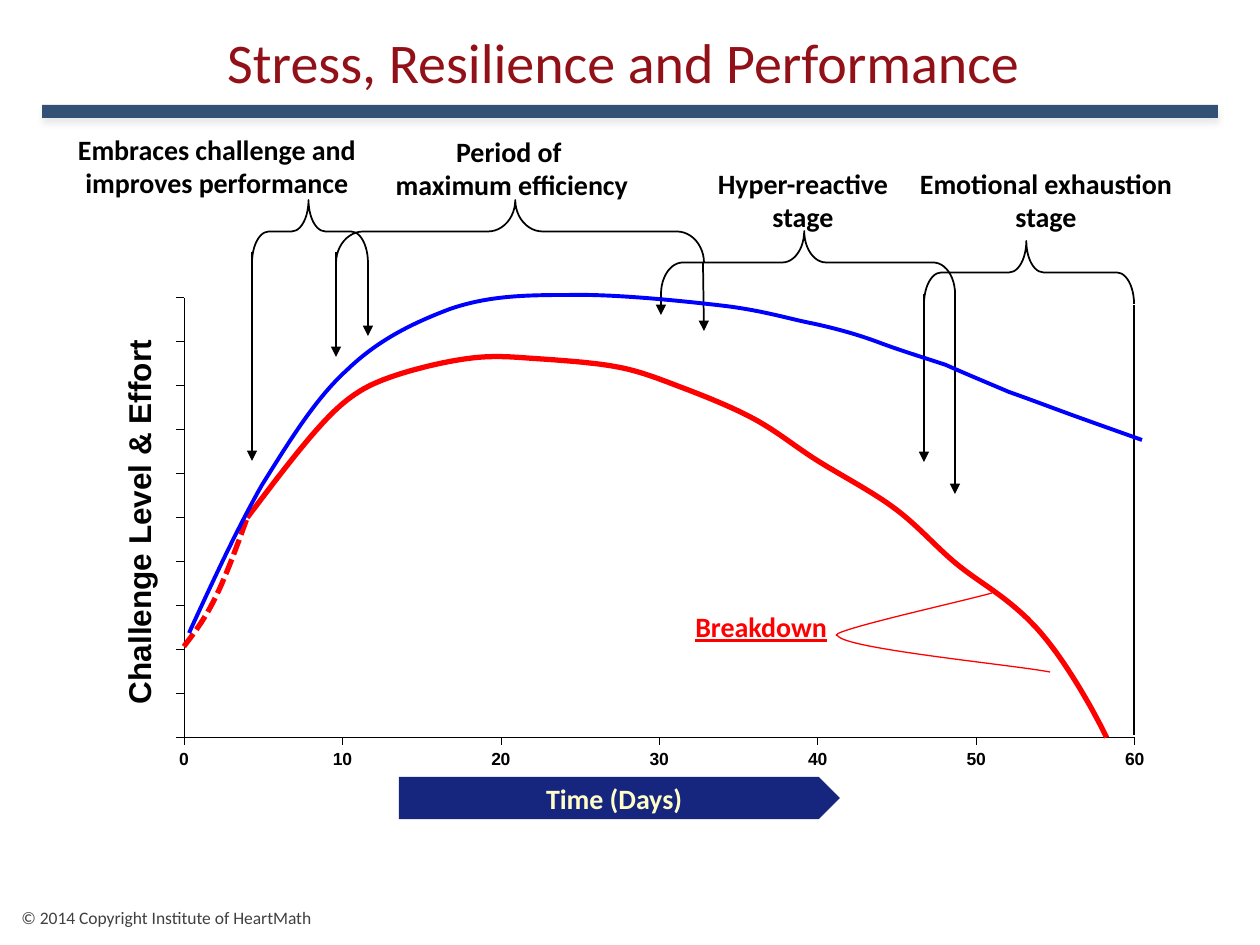
from lxml.etree import SubElement
from pptx import Presentation
from pptx.chart.data import XyChartData
from pptx.dml.color import RGBColor
from pptx.enum.chart import XL_CHART_TYPE as ChartType, XL_TICK_LABEL_POSITION as LabelPlace, XL_TICK_MARK as Tick
from pptx.enum.dml import MSO_LINE as Dash
from pptx.enum.shapes import MSO_CONNECTOR as Connector, MSO_SHAPE as Shape
from pptx.enum.text import MSO_ANCHOR as Anchor, PP_ALIGN as Align
from pptx.oxml import parse_xml
from pptx.oxml.ns import nsdecls, qn
from pptx.util import Emu, Pt

SCALE = 914400 / 126
COLORS = {"title": "921118", "bar": "335075", "black": "000000", "red": "FF0000", "blue": "0000FF",
          "arrow": "16267E", "cream": "FFFEC9", "footer": "404040"}

TITLE = "Stress, Resilience and Performance "
STAGES = [
    (["Embraces challenge and improves performance"], (53, 126, 328, 81)),
    (["Period of ", "maximum efficiency"], (381, 128, 262, 81)),
    (["Hyper-reactive", "stage"], (672, 160, 262, 81)),
    (["Emotional exhaustion", "stage"], (884, 160, 324, 81)),
]
BRACES = [(252, 368, 200, 0.267), (336, 704, 200, 0.434), (661, 955, 231, 0.347), (924, 1134, 241, 0.273)]
BRACE_DEPTH = 63
BRACE_POINT = 0.513
ARROWS = [(368, 262, 368, 336), (336, 252, 336, 357), (703, 262, 704, 331), (924, 294, 924, 462),
          (252, 252, 252, 461), (661, 294, 661, 315), (955, 294, 955, 494)]
END_LINE = (1134, 305, 1134, 735)

DAYS = [0, 2, 4, 4, 9, 13, 18, 22, 27, 31, 36, 40, 45, 49, 54, 58, 58]
SERIES = [
    ("Series 1", None, [None] * 3 + [58, 84, 95, 100, 100, 98, 93, 84, 73, 60, 45, 28, 2, 0]),
    ("Series 2", Dash.SQUARE_DOT, [24, 37, 58] + [None] * 14),
]
CHALLENGE_CURVE = [
    (189, 633), (213, 581), (237, 529), (262, 485), (289, 442), (315, 399), (347, 370),
    (378, 340), (413, 323), (450, 309), (488, 296), (523, 295), (570, 295),
    (615, 294), (683, 301), (725, 306), (765, 311), (789, 319), (815, 324),
    (842, 330), (862, 336), (883, 344), (905, 352), (925, 358), (946, 365),
    (966, 374), (988, 383), (1009, 392), (1029, 399), (1050, 407), (1072, 415),
    (1094, 423), (1128, 435), (1142, 440),
]
BREAKDOWN_CURVE = [(1050, 672), (1014, 665), (847, 649), (838, 636), (819, 633), (960, 602), (992, 593)]


def px(value):
    return Emu(round(value * SCALE))


def rgb(name):
    return RGBColor.from_string(COLORS[name])


def set_line(line, color, width):
    line.color.rgb = rgb(color)
    line.width = Pt(width)


def write(frame, lines, size, color, align=Align.LEFT, bold=False, underline=False):
    frame.word_wrap = True
    for index, text in enumerate(lines):
        para = frame.paragraphs[0] if index == 0 else frame.add_paragraph()
        para.alignment = align
        span = para.add_run()
        span.text = text
        span.font.name = "Calibri"
        span.font.size = Pt(size)
        span.font.bold = bold
        span.font.underline = underline
        span.font.color.rgb = rgb(color)


def add_text(page, rect, lines, size, color, **style):
    box = page.shapes.add_textbox(*map(px, rect))
    write(box.text_frame, lines, size, color, **style)


def add_filled(page, kind, rect, color):
    shape = page.shapes.add_shape(kind, *map(px, rect))
    shape.shadow.inherit = False
    shape.fill.solid()
    shape.fill.fore_color.rgb = rgb(color)
    shape.line.fill.background()
    return shape


def add_brace(page, left, right, top, bend):
    length = right - left
    center_x, center_y = (left + right) / 2, top + BRACE_DEPTH / 2
    rect = (center_x - BRACE_DEPTH / 2, center_y - length / 2, BRACE_DEPTH, length)
    brace = page.shapes.add_shape(Shape.LEFT_BRACE, *map(px, rect))
    brace.rotation = 90
    brace.adjustments[0] = bend
    brace.adjustments[1] = BRACE_POINT
    brace.shadow.inherit = False
    brace.fill.background()
    set_line(brace.line, "black", 1)


def add_line(page, ends, arrow=True):
    line = page.shapes.add_connector(Connector.STRAIGHT, *map(px, ends))
    set_line(line.line, "black", 1)
    if arrow:
        SubElement(line.line._get_or_add_ln(), qn("a:tailEnd"), type="triangle")
    SubElement(line._element.spPr, qn("a:effectLst"))


def add_curve(page, knots, color, width):
    points = [(px(x), px(y)) for x, y in knots]
    builder = page.shapes.build_freeform(*points[0])
    builder.add_line_segments(points[1:], close=False)
    curve = builder.convert_to_shape()
    outline = next(curve._element.iter(qn("a:path")))
    segments = outline.findall(qn("a:lnTo"))
    for start in range(0, len(segments), 3):
        bezier = SubElement(outline, qn("a:cubicBezTo"))
        for segment in segments[start:start + 3]:
            bezier.append(segment[0])
            outline.remove(segment)
    curve.shadow.inherit = False
    curve.fill.background()
    set_line(curve.line, color, width)


def manual_layout(parts):
    body = "".join(f'<c:{tag} val="{value}"/>' for tag, value in parts)
    return parse_xml(f'<c:layout {nsdecls("c")}><c:manualLayout>{body}</c:manualLayout></c:layout>')


def drop_layout(element):
    for old in element.findall(qn("c:layout")):
        element.remove(old)


def add_stress_chart(page):
    data = XyChartData()
    for name, _, values in SERIES:
        series = data.add_series(name)
        for day, value in zip(DAYS, values):
            series.add_data_point(day, value)
    frame = page.shapes.add_chart(ChartType.XY_SCATTER_SMOOTH_NO_MARKERS, *map(px, (98, 283, 1060, 508)), data)
    chart = frame.chart
    chart.has_legend = False
    chart.has_title = False
    chart.font.name = "Arial"
    chart.font.size = Pt(18)
    chart.font.bold = True
    chart.font.color.rgb = rgb("black")
    chart.plots[0].vary_by_categories = False
    for series, (_, dash, _) in zip(chart.plots[0].series, SERIES):
        series._element.get_or_add_smooth().val = True
        for point in list(series._element.iter(qn("c:pt"))):
            if point.findtext(qn("c:v")) in ("None", "", None):
                point.getparent().remove(point)
        set_line(series.format.line, "red", 3)
        if dash:
            series.format.line.dash_style = dash
    days, effort = chart.category_axis, chart.value_axis
    for axis, top, unit in ((days, 60, 10), (effort, 116, 11.6)):
        axis.minimum_scale, axis.maximum_scale, axis.major_unit = 0, top, unit
        axis.has_major_gridlines = False
        axis.major_tick_mark, axis.minor_tick_mark = Tick.OUTSIDE, Tick.NONE
        set_line(axis.format.line, "black", 0.25)
    days.tick_label_position = LabelPlace.LOW
    days.tick_labels.font.size = Pt(10)
    days.tick_labels.font.bold = True
    effort.tick_label_position = LabelPlace.NONE
    span = effort.axis_title.text_frame.paragraphs[0].add_run()
    span.text = "Challenge Level & Effort "
    span.font.name = "Arial"
    span.font.size = Pt(18)
    span.font.bold = True
    span.font.color.rgb = rgb("black")
    effort.axis_title.text_frame._txBody.bodyPr.set("rot", "-5400000")
    title = effort.axis_title._element
    drop_layout(title)
    title.find(qn("c:tx")).addnext(manual_layout(
        [("xMode", "edge"), ("yMode", "edge"), ("x", 0.014), ("y", 0.084)]))
    area = chart._chartSpace.chart.plotArea
    drop_layout(area)
    area.insert(0, manual_layout([("layoutTarget", "inner"), ("xMode", "edge"), ("yMode", "edge"),
                                  ("x", 0.081), ("y", 0.029), ("w", 0.897), ("h", 0.866)]))


def main():
    deck = Presentation()
    deck.slide_width, deck.slide_height = px(1260), px(945)
    page = deck.slides.add_slide(deck.slide_layouts[5])

    title = page.shapes.title
    title.left, title.top, title.width, title.height = map(px, (0, 21, 1260, 81))
    title.text_frame.vertical_anchor = Anchor.TOP
    write(title.text_frame, [TITLE], 32, "title", align=Align.CENTER)

    add_text(page, (9, 901, 347, 32), ["© 2014 Copyright Institute of HeartMath"], 10, "footer")
    add_stress_chart(page)
    for lines, rect in STAGES:
        add_text(page, rect, lines, 16, "black", align=Align.CENTER, bold=True)
    for brace in BRACES:
        add_brace(page, *brace)
    for ends in ARROWS:
        add_line(page, ends)
    add_line(page, END_LINE, arrow=False)

    add_curve(page, BREAKDOWN_CURVE, "red", 0.75)
    add_text(page, (683, 603, 220, 113), ["Breakdown"], 16, "red", bold=True, underline=True)
    time_arrow = add_filled(page, Shape.PENTAGON, (399, 777, 441, 42), "arrow")
    time_arrow.text_frame.vertical_anchor = Anchor.MIDDLE
    write(time_arrow.text_frame, ["Time (Days)"], 16, "cream", align=Align.CENTER, bold=True)
    add_curve(page, CHALLENGE_CURVE, "blue", 2.25)

    bar = add_filled(page, Shape.RECTANGLE, (42, 105, 1176, 13), "bar")
    effects = bar._element.spPr.find(qn("a:effectLst"))
    effects.append(parse_xml(
        f'<a:outerShdw {nsdecls("a")} blurRad="{Pt(3.1)}" dist="{Pt(3)}" dir="5400000" rotWithShape="0">'
        '<a:srgbClr val="808080"><a:alpha val="17000"/></a:srgbClr></a:outerShdw>'))
    deck.save("out.pptx")


if __name__ == "__main__":
    main()
